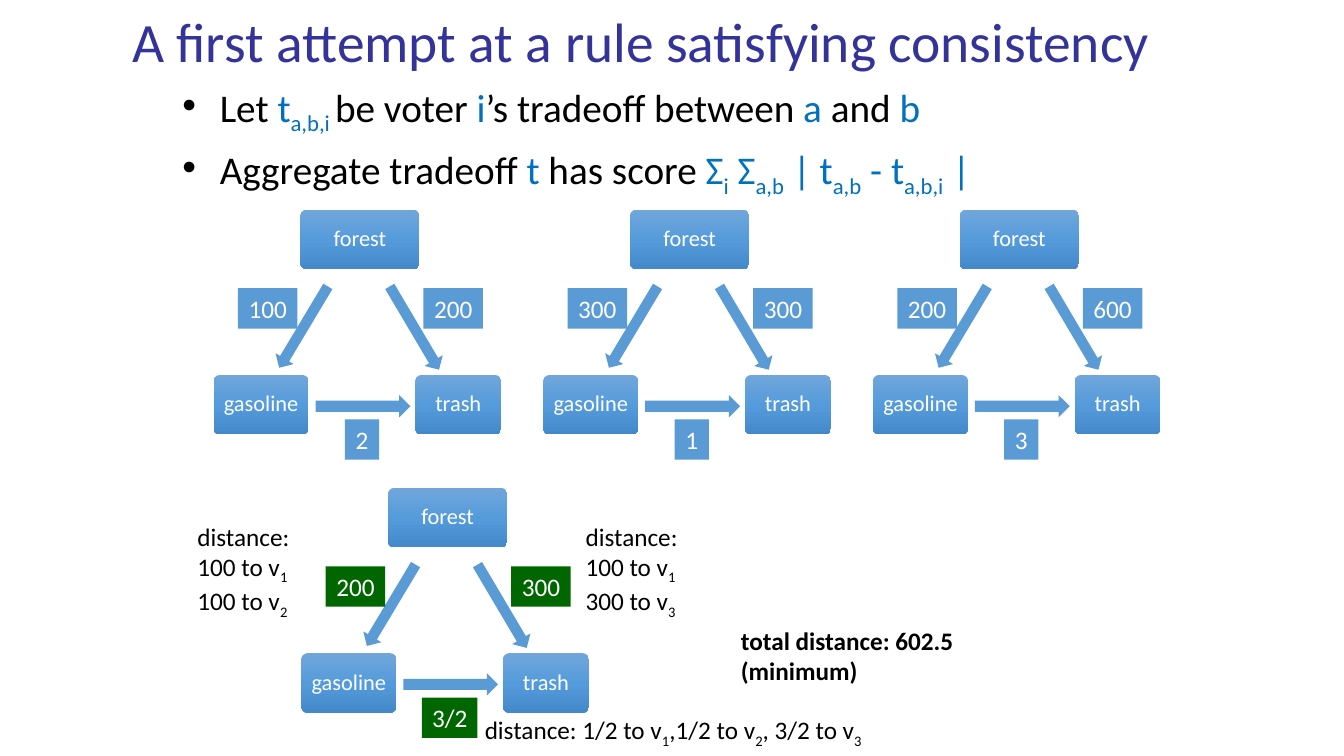
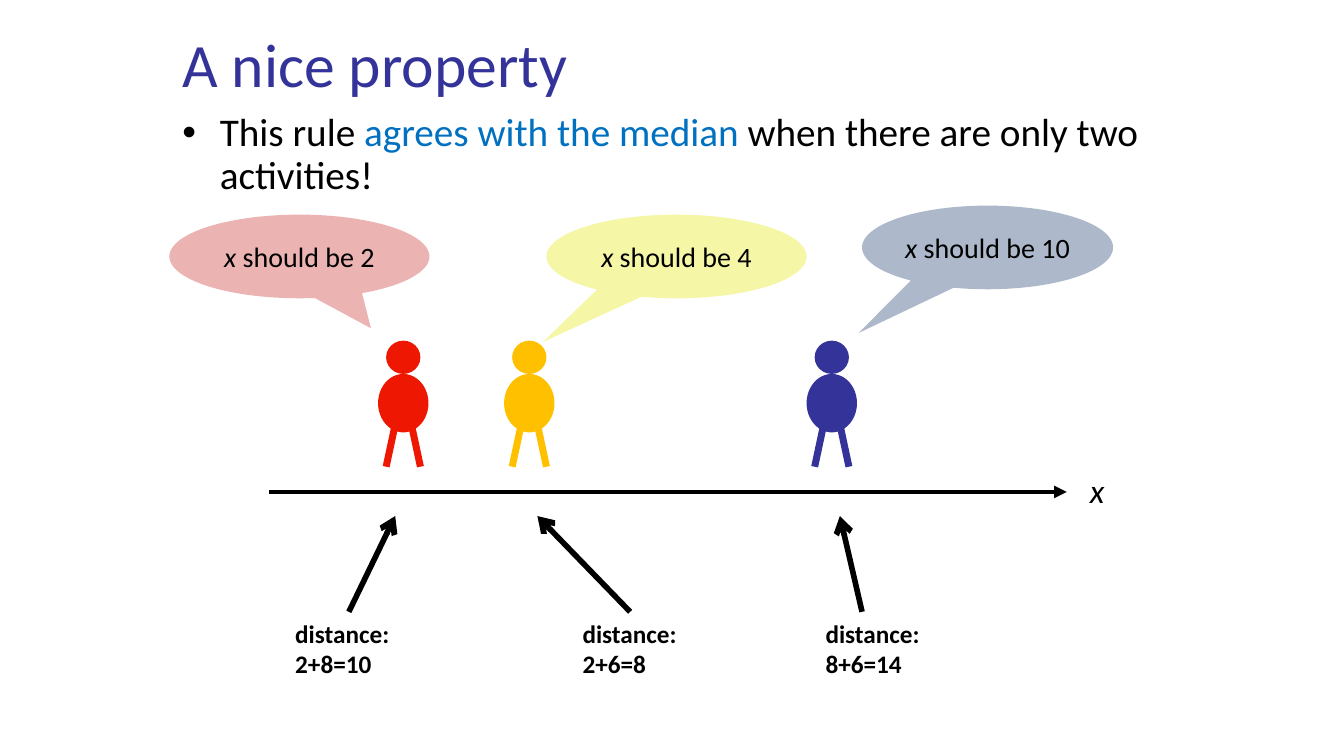
from copy import deepcopy

from lxml.etree import SubElement
from pptx import Presentation
from pptx.dml.color import RGBColor
from pptx.enum.shapes import MSO_CONNECTOR, MSO_SHAPE as SHAPE
from pptx.enum.text import MSO_ANCHOR as ANCHOR, PP_ALIGN as ALIGN
from pptx.oxml.ns import qn
from pptx.util import Inches, Pt

FONT = "Calibri"
COLORS = {
    "black": "000000", "white": "FFFFFF", "title": "333399", "accent": "0070C0",
    "arrow": "5B9BD5", "result": "006600",
    "red": "EE1802", "amber": "FFC000", "navy": "333399",
    "pink": "EBB4B3", "lemon": "F5F7A7", "slate": "ADB9CA",
}
NODE_GRADIENT = [(0, "71A6DB"), (0.5, "559BDB"), (1, "448ACA")]


def write(shape, paragraphs, size=18, color="black", bold=False, align=ALIGN.LEFT,
          anchor=ANCHOR.TOP, margins=(0.1, 0.05), wrap=True, spacing=1, gap=0, bullet=False):
    """Fill a shape with paragraphs, each a list of strings or (string, style words) pairs."""
    frame = shape.text_frame
    frame.word_wrap = wrap
    frame.vertical_anchor = anchor
    frame.margin_left = frame.margin_right = Inches(margins[0])
    frame.margin_top = frame.margin_bottom = Inches(margins[1])
    for number, runs in enumerate(paragraphs):
        para = frame.add_paragraph() if number else frame.paragraphs[0]
        para.alignment = align
        para.line_spacing = spacing
        para.space_before = Pt(gap if number else 0)
        if bullet:
            properties = para._p.get_or_add_pPr()
            properties.set("marL", str(Inches(0.37)))
            properties.set("indent", str(Inches(-0.37)))
            SubElement(properties, qn("a:buFont"), typeface="Arial")
            SubElement(properties, qn("a:buChar"), char="•")
        for run in runs:
            text, style = (run, "") if isinstance(run, str) else run
            span = para.add_run()
            span.text = text
            span.font.name = FONT
            span.font.size = Pt(size)
            span.font.bold = bold
            span.font.italic = "italic" in style
            span.font.color.rgb = RGBColor.from_string(
                COLORS["accent" if "accent" in style else color])
            if "sub" in style:
                span._r.get_or_add_rPr().set("baseline", "-25000")


def draw(shapes, kind, at, color):
    shape = shapes.add_shape(kind, *map(Inches, at))
    shape.shadow.inherit = False
    shape.fill.solid()
    shape.fill.fore_color.rgb = RGBColor.from_string(COLORS[color])
    shape.line.fill.background()
    return shape


deck = Presentation()
deck.slide_width, deck.slide_height = Inches(13.33), Inches(7.5)

# Titles and bullets
headings = [
    ("A first attempt at a rule satisfying consistency", 39.6, (1.31, -0.05, 10.8, 0.99), 0.83, [
        ["Let ", ("t", "accent"), ("a,b,i ", "accent sub"), "be voter ", ("i", "accent"),
         "’s tradeoff between ", ("a", "accent"), " and ", ("b", "accent")],
        ["Aggregate tradeoff ", ("t", "accent"), " has score ", ("Σ", "accent"),
         ("i", "accent sub"), (" Σ", "accent"), ("a,b", "accent sub"), (" | t", "accent"),
         ("a,b", "accent sub"), (" - t", "accent"), ("a,b,i", "accent sub"), (" |", "accent")],
    ]),
    ("A nice property", 44, (1.81, 0.17, 10, 0.99), 1.12, [
        ["This rule ", ("agrees with the median ", "accent"),
         "when there are only two activities!"],
    ]),
]
pages = []
for title, size, title_at, body_top, bullets in headings:
    page = deck.slides.add_slide(deck.slide_layouts[6])
    pages.append(page)
    box = page.shapes.add_textbox(*map(Inches, title_at))
    write(box, [[title]], size=size, color="title", anchor=ANCHOR.MIDDLE,
          margins=(0, 0), spacing=0.9)
    box = page.shapes.add_textbox(*map(Inches, (1.81, body_top, 9.61, 5.42)))
    write(box, bullets, size=28, margins=(0, 0), spacing=0.9, gap=10, bullet=True)
rule_page, median_page = pages

# Slide 1: tradeoff triangles, placed relative to their left and top
nodes = [("forest", 0.86, 0, 1.18), ("trash", 2, 1.64, 0.85), ("gasoline", 0, 1.64, 0.94)]
arrows = [(1.51, 1.07, 0.96, 0.21, 59.4), (1.01, 1.84, 0.94, 0.22, 0),
          (0.42, 1.06, 0.94, 0.21, 120.9)]
triangles = [
    (2.12, 2.08, "arrow", "100", "200", "2", 0.34),
    (5.39, 2.08, "arrow", "300", "300", "1", 0.34),
    (8.66, 2.08, "arrow", "200", "600", "3", 0.34),
    (2.99, 4.84, "result", "200", "300", "3/2", 0.55),
]
for left, top, label_color, to_gasoline, to_trash, across, across_width in triangles:
    group = rule_page.shapes.add_group_shape().shapes
    for name, x, y, width in nodes:
        node = draw(group, SHAPE.ROUNDED_RECTANGLE, (left + x, top + y, width, 0.59), "arrow")
        node.adjustments[0] = 0.1
        node.fill.gradient()
        node.fill.gradient_angle = 270
        stop_list = node.element.spPr.find(".//" + qn("a:gsLst"))
        stop_list.insert(1, deepcopy(stop_list[0]))
        for stop, (position, shade) in zip(node.fill.gradient_stops, NODE_GRADIENT):
            stop.position = position
            stop.color.rgb = RGBColor.from_string(shade)
        write(node, [[name]], size=16, color="white", align=ALIGN.CENTER,
              anchor=ANCHOR.MIDDLE, margins=(0.07, 0.07), wrap=False, spacing=0.9)
    for x, y, width, height, angle in arrows:
        arrow = draw(group, SHAPE.RIGHT_ARROW, (left + x, top + y, width, height), "arrow")
        arrow.rotation = angle
    labels = [(to_gasoline, 0.24, 0.78, 0.59), (to_trash, 2.08, 0.78, 0.59),
              (across, 1.47 - across_width / 2, 2.08, across_width)]
    for value, x, y, width in labels:
        label = draw(rule_page.shapes, SHAPE.RECTANGLE,
                     (left + x, top + y, width, 0.4), label_color)
        write(label, [[value]], color="white", align=ALIGN.CENTER, wrap=False)

for left, far_distance, far_voter in [(1.86, "100", "2"), (5.71, "300", "3")]:
    box = rule_page.shapes.add_textbox(*map(Inches, (left, 5.12, 1.13, 1.01)))
    write(box, [["distance:"], ["100 to v", ("1", "sub")],
                [f"{far_distance} to v", (far_voter, "sub")]], wrap=False)
box = rule_page.shapes.add_textbox(*map(Inches, (4.71, 7.04, 5.34, 0.61)))
write(box, [["distance: 1/2 to v", ("1", "sub"), ",1/2 to v", ("2", "sub"),
             ", 3/2 to v", ("3", "sub")]])
box = rule_page.shapes.add_textbox(*map(Inches, (7.25, 6.15, 2.62, 0.91)))
write(box, [["total distance: 602.5 (minimum)"]], bold=True)

# Slide 2: voters with their opinions above the x axis
voters = [
    (4, "red", "2", "pink", (1.68, 2.13, 2.58, 0.83), (0.275, 0.858)),
    (5.25, "amber", "4", "lemon", (5.42, 2.13, 2.58, 0.83), (-0.514, 1.023)),
    (8.25, "navy", "10", "slate", (8.55, 2.04, 2.49, 0.83), (-0.514, 1.023)),
]
lines = [((2.67, 4.88), (10.58, 4.88), "black", 3, "triangle")]
for center, color, opinion, bubble_color, bubble_at, pointer in voters:
    draw(median_page.shapes, SHAPE.OVAL, (center - 0.25, 3.71, 0.5, 0.58), color)
    draw(median_page.shapes, SHAPE.OVAL, (center - 0.17, 3.38, 0.34, 0.33), color)
    for side in (-1, 1):
        lines.append(((center + side * 0.08, 4.21), (center + side * 0.17, 4.63),
                      color, 5, None))
    bubble = draw(median_page.shapes, SHAPE.OVAL_CALLOUT, bubble_at, bubble_color)
    bubble.adjustments[0], bubble.adjustments[1] = pointer
    write(bubble, [[("x", "italic"), f" should be {opinion}"]], size=20,
          align=ALIGN.CENTER, anchor=ANCHOR.MIDDLE, wrap=False)

box = median_page.shapes.add_textbox(*map(Inches, (10.71, 4.61, 0.35, 0.5)))
write(box, [[("x", "italic")]], size=24, wrap=False)

distances = [(2.83, "2+8=10", 3.46, 3.92), (5.68, "2+6=8", 6.25, 5.33),
             (8.09, "8+6=14", 8.55, 8.33)]
for left, total, start, end in distances:
    box = median_page.shapes.add_textbox(*map(Inches, (left, 6.08, 1.14, 0.71)))
    write(box, [["distance:"], [total]], bold=True, wrap=False)
    lines.append(((start, 6.07), (end, 5.12), "black", 4, "arrow"))

for start, end, color, width, head in lines:
    line = median_page.shapes.add_connector(MSO_CONNECTOR.STRAIGHT, *map(Inches, start + end))
    line.line.color.rgb = RGBColor.from_string(COLORS[color])
    line.line.width = Pt(width)
    if head:
        SubElement(line.line._get_or_add_ln(), qn("a:tailEnd"), type=head)
    SubElement(line.element.spPr, qn("a:effectLst"))

deck.save("out.pptx")
